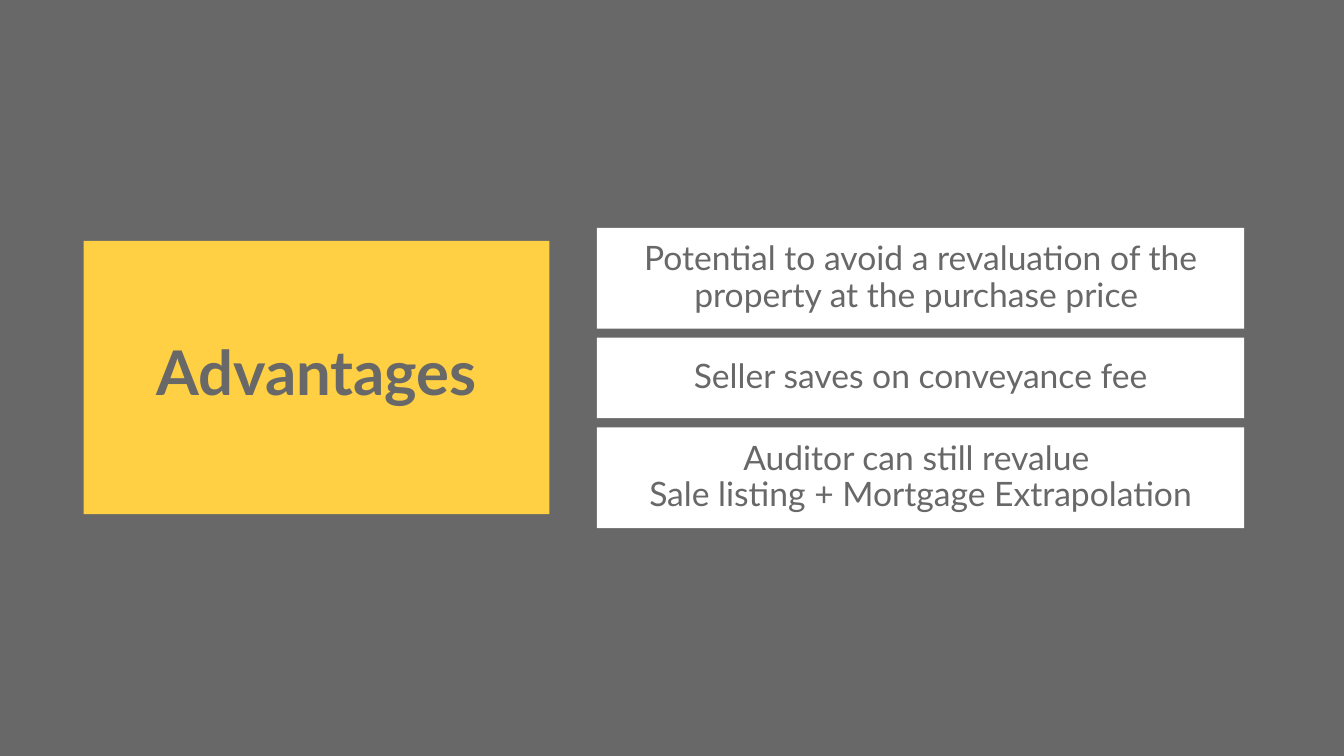
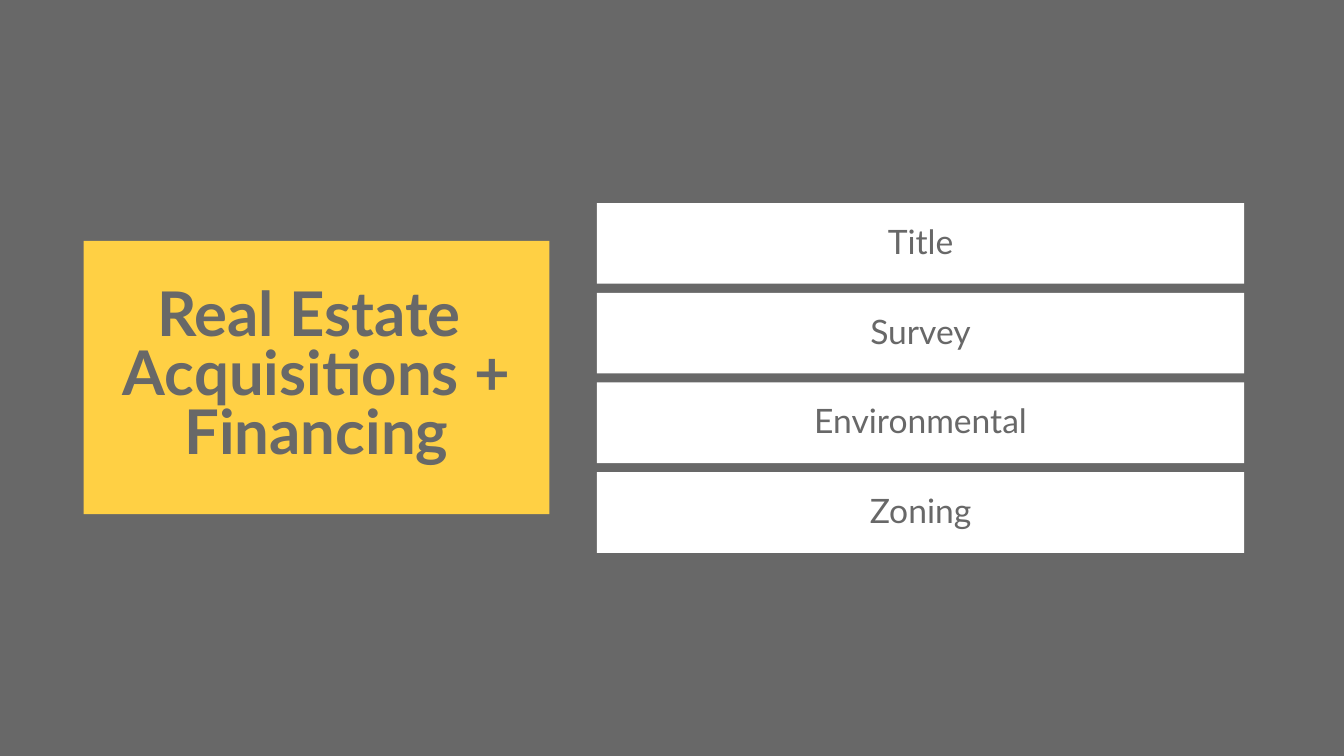
from pptx import Presentation
from pptx.dml.color import RGBColor
from pptx.enum.shapes import MSO_SHAPE
from pptx.enum.text import MSO_ANCHOR, PP_ALIGN
from pptx.util import Inches, Pt

RECTANGLE = MSO_SHAPE.RECTANGLE
MIDDLE = MSO_ANCHOR.MIDDLE
CENTER = PP_ALIGN.CENTER

# Shared look
GRAY = RGBColor(0x68, 0x68, 0x68)
YELLOW = RGBColor(0xFF, 0xD0, 0x44)
WHITE = RGBColor(0xFF, 0xFF, 0xFF)
FONT = "Lato"

# Shared layout, in inches
SLIDE_WIDTH, SLIDE_HEIGHT = 13.33, 7.5
TITLE_BOX = (0.83, 2.39, 4.62, 2.71)
CARD_LEFT, CARD_WIDTH, CARD_GAP = 5.92, 6.42, 0.09
ONE_LINE, TWO_LINES = 0.8, 1.0

# Each slide: title paragraphs, then (card text, card height)
SLIDES = [
    (["Advantages"], [
        ("Potential to avoid a revaluation of the property at the purchase price ", TWO_LINES),
        ("Seller saves on conveyance fee", ONE_LINE),
        ("Auditor can still revalue \vSale listing + Mortgage Extrapolation", TWO_LINES),
    ]),
    (["Real Estate ", "Acquisitions + Financing"], [
        (topic, ONE_LINE) for topic in ("Title", "Survey", "Environmental", "Zoning")
    ]),
]


def write_text(text_frame, paragraphs, *, size, spacing, bold=False):
    """Fill a frame with centred paragraphs in the shared font."""
    text_frame.word_wrap = True
    text_frame.vertical_anchor = MIDDLE
    for index, text in enumerate(paragraphs):
        paragraph = text_frame.add_paragraph() if index else text_frame.paragraphs[0]
        paragraph.text = text
        paragraph.alignment = CENTER
        paragraph.line_spacing = spacing
        for run in paragraph.runs:
            run.font.name = FONT
            run.font.size = Pt(size)
            run.font.bold = bold
            run.font.color.rgb = GRAY


def add_box(slide, box, fill):
    """Add a flat rectangle without outline."""
    shape = slide.shapes.add_shape(RECTANGLE, *map(Inches, box))
    shape.shadow.inherit = False
    shape.fill.solid()
    shape.fill.fore_color.rgb = fill
    shape.line.fill.background()
    return shape


def add_title(slide, paragraphs):
    shape = add_box(slide, TITLE_BOX, YELLOW)
    write_text(shape.text_frame, paragraphs, size=44, spacing=0.8, bold=True)


def add_cards(slide, cards):
    """Stack the cards, centred on the slide's height."""
    total = sum(height for _, height in cards) + CARD_GAP * (len(cards) - 1)
    top = (SLIDE_HEIGHT - total) / 2
    for text, height in cards:
        shape = add_box(slide, (CARD_LEFT, top, CARD_WIDTH, height), WHITE)
        write_text(shape.text_frame, [text], size=24, spacing=0.9)
        top += height + CARD_GAP


def main():
    presentation = Presentation()
    presentation.slide_width = Inches(SLIDE_WIDTH)
    presentation.slide_height = Inches(SLIDE_HEIGHT)

    # Shared background
    background = presentation.slide_master.background.fill
    background.solid()
    background.fore_color.rgb = GRAY

    blank_layout = presentation.slide_layouts[6]
    for title, cards in SLIDES:
        slide = presentation.slides.add_slide(blank_layout)
        add_title(slide, title)
        add_cards(slide, cards)

    presentation.save("out.pptx")


if __name__ == "__main__":
    main()
